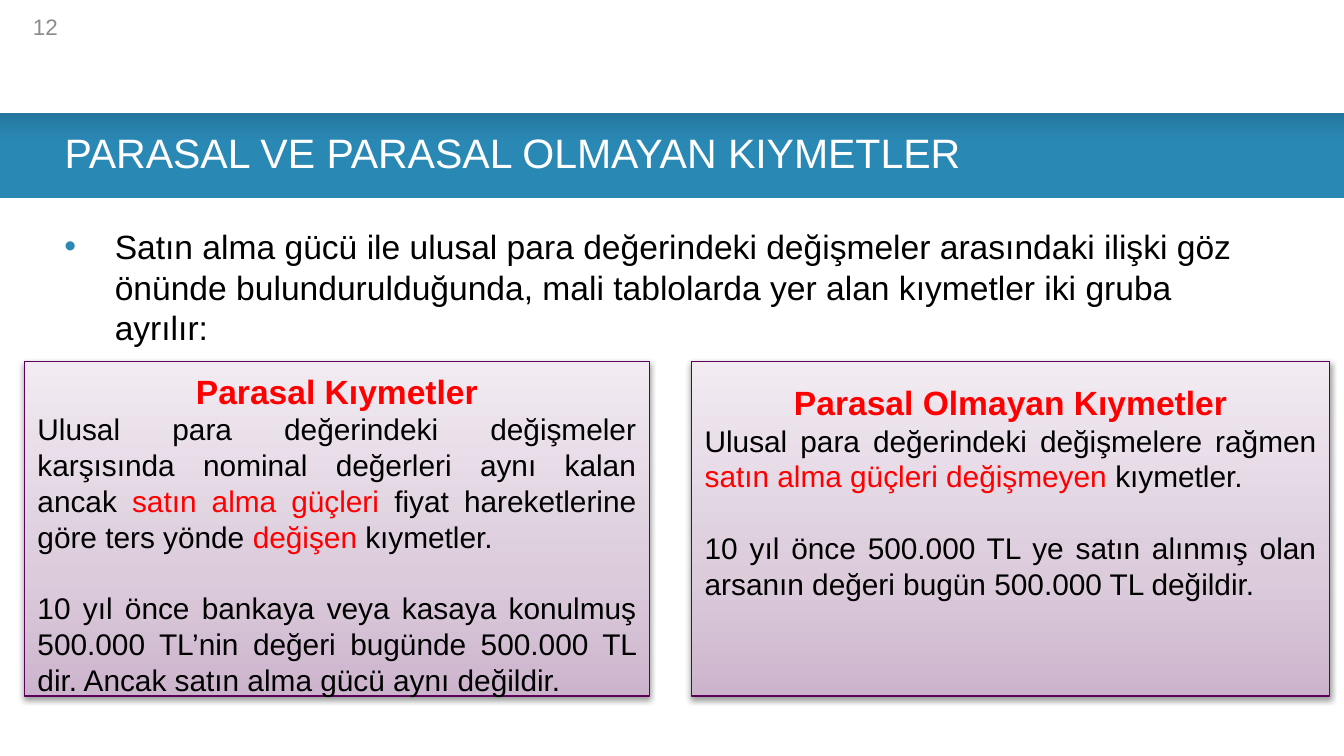
from pptx import Presentation
from pptx.dml.color import RGBColor
from pptx.enum.shapes import MSO_SHAPE
from pptx.enum.text import MSO_ANCHOR, PP_ALIGN
from pptx.oxml.ns import qn
from pptx.util import Pt
from lxml import etree

RECTANGLE = MSO_SHAPE.RECTANGLE
TOP, MIDDLE = MSO_ANCHOR.TOP, MSO_ANCHOR.MIDDLE
LEFT, RIGHT = PP_ALIGN.LEFT, PP_ALIGN.RIGHT
CENTER, JUSTIFY = PP_ALIGN.CENTER, PP_ALIGN.JUSTIFY

BLACK = RGBColor(0x00, 0x00, 0x00)
WHITE = RGBColor(0xFF, 0xFF, 0xFF)
RED = RGBColor(0xFF, 0x00, 0x00)
GRAY = RGBColor(0x8C, 0x8C, 0x8C)
PURPLE = RGBColor(0x5D, 0x00, 0x5C)
BULLET_BLUE = RGBColor(0x2A, 0x89, 0xB4)
BAND_STOPS = [(0, RGBColor(0x24, 0x77, 0x9F)), (34, RGBColor(0x2A, 0x88, 0xB4))]
PANEL_STOPS = [
    (0, RGBColor(0xCD, 0xB4, 0xCD)),
    (35, RGBColor(0xDB, 0xCB, 0xDB)),
    (100, RGBColor(0xF2, 0xEB, 0xF2)),
]


def add_span(para, text, size=16, color=BLACK, bold=False, font="Arial"):
    span = para.add_run()
    span.text = text
    span.font.name = font
    span.font.size = Pt(size)
    span.font.bold = bold
    span.font.color.rgb = color


def add_element(parent, tag, **attributes):
    return etree.SubElement(parent, qn(tag), {key: str(value) for key, value in attributes.items()})


class SlideWriter:
    def __init__(self, page):
        self.page = page

    def place(self, box, left, top, width, height):
        box.left, box.top, box.width, box.height = Pt(left), Pt(top), Pt(width), Pt(height)

    def frame(self, box, anchor):
        frame = box.text_frame
        frame.word_wrap = True
        frame.vertical_anchor = anchor
        return frame

    def gradient_box(self, left, top, width, height, stops, angle):
        box = self.page.shapes.add_shape(RECTANGLE, Pt(left), Pt(top), Pt(width), Pt(height))
        box.shadow.inherit = False
        box.fill.gradient()
        box.fill.gradient_angle = angle
        stop_list = box.element.spPr.find(qn("a:gradFill")).find(qn("a:gsLst"))
        for stop in list(stop_list):
            stop_list.remove(stop)
        for position, color in stops:
            stop = add_element(stop_list, "a:gs", pos=position * 1000)
            add_element(stop, "a:srgbClr", val=color)
        return box

    def band(self, top, height):
        band = self.gradient_box(0, top, 720, height, BAND_STOPS, 270)
        band.line.fill.background()
        self.page.shapes._spTree.insert(2, band.element)

    def title(self, text, left, top, width, height):
        title = self.page.shapes.title
        self.place(title, left, top, width, height)
        para = self.frame(title, MIDDLE).paragraphs[0]
        para.alignment = LEFT
        add_span(para, text, size=22, color=WHITE)

    def text(self, text, left, top, width, height, size, color=BLACK, align=LEFT, anchor=TOP):
        box = self.page.shapes.add_textbox(Pt(left), Pt(top), Pt(width), Pt(height))
        para = self.frame(box, anchor).paragraphs[0]
        para.alignment = align
        add_span(para, text, size=size, color=color)
        return para

    def bullet(self, text, left, top, width, height):
        para = self.text(text, left, top, width, height, 18)
        para.line_spacing = Pt(21.75)
        properties = para._p.get_or_add_pPr()
        properties.set("marL", str(Pt(27)))
        properties.set("indent", str(-Pt(27)))
        bullet_color = add_element(properties, "a:buClr")
        add_element(bullet_color, "a:srgbClr", val=BULLET_BLUE)
        add_element(properties, "a:buFont", typeface="Arial")
        add_element(properties, "a:buChar", char="•")

    def panel(self, left, width, inset, heading, definition, example):
        panel = self.gradient_box(left, 193.7, width, 179.3, PANEL_STOPS, 90)
        panel.line.color.rgb = PURPLE
        panel.line.width = Pt(0.75)
        effects = panel.element.spPr.find(qn("a:effectLst"))
        shadow = add_element(effects, "a:outerShdw", blurRad=Pt(3.1), dist=Pt(1.6),
                             dir=5400000, rotWithShape=0)
        color = add_element(shadow, "a:srgbClr", val=BLACK)
        add_element(color, "a:alpha", val=38000)

        frame = self.frame(panel, TOP)
        frame.margin_top = Pt(inset)
        frame.margin_bottom = 0
        para = frame.paragraphs[0]
        para.alignment = CENTER
        add_span(para, heading, size=18, color=RED, bold=True)
        for spans, gap in ((definition, 0), ([(example, BLACK)], 19.2)):
            para = frame.add_paragraph()
            para.alignment = JUSTIFY
            para.line_spacing = Pt(19.15)
            para.space_before = Pt(gap)
            for text, color in spans:
                add_span(para, text, color=color)


def main():
    deck = Presentation()
    deck.slide_width, deck.slide_height = Pt(720), Pt(405)
    writer = SlideWriter(deck.slides.add_slide(deck.slide_layouts[5]))

    writer.band(60.5, 45.5)
    writer.title("PARASAL VE PARASAL OLMAYAN KIYMETLER", 27.4, 62.6, 648, 38.2)
    writer.bullet(
        "Satın alma gücü ile ulusal para değerindeki değişmeler arasındaki ilişki göz "
        "önünde bulundurulduğunda, mali tablolarda yer alan kıymetler iki gruba ayrılır:",
        27.4, 117.4, 648, 75)
    writer.panel(
        13, 335, 5, "Parasal Kıymetler",
        [("Ulusal para değerindeki değişmeler karşısında nominal değerleri aynı kalan ancak ", BLACK),
         ("satın alma güçleri ", RED),
         ("fiyat hareketlerine göre ters yönde ", BLACK),
         ("değişen", RED),
         (" kıymetler.", BLACK)],
        "10 yıl önce bankaya veya kasaya konulmuş 500.000 TL’nin değeri bugünde "
        "500.000 TL dir. Ancak satın alma gücü aynı değildir.")
    writer.panel(
        370.4, 342, 11, "Parasal Olmayan Kıymetler",
        [("Ulusal para değerindeki değişmelere rağmen ", BLACK),
         ("satın alma güçleri değişmeyen", RED),
         (" kıymetler.", BLACK)],
        "10 yıl önce 500.000 TL ye satın alınmış olan arsanın değeri bugün "
        "500.000 TL değildir.")
    writer.text("12", 3, 3, 35, 22, 12, color=GRAY, align=RIGHT, anchor=MIDDLE)

    deck.save("out.pptx")


if __name__ == "__main__":
    main()
